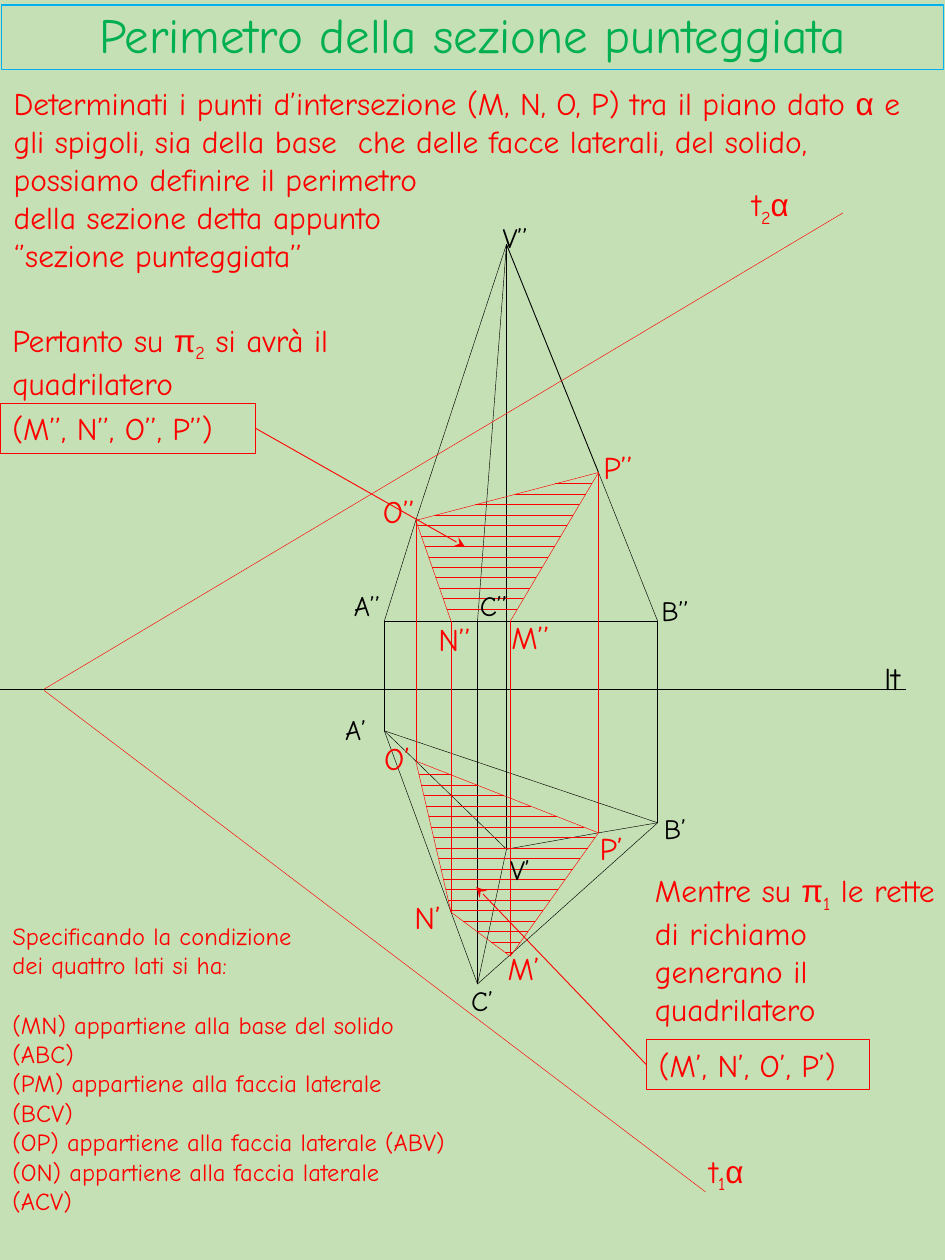
"""Build the slide on the dotted section of a pyramid in double projection."""
from itertools import groupby

from lxml.etree import SubElement
from pptx import Presentation
from pptx.dml.color import RGBColor
from pptx.enum.shapes import MSO_CONNECTOR as Link, MSO_SHAPE as Preset
from pptx.enum.text import MSO_ANCHOR as Anchor, MSO_AUTO_SIZE as Fit, PP_ALIGN as Align
from pptx.oxml.ns import qn
from pptx.util import Inches, Pt

BLACK, RED, GREEN, CYAN, PALE = "000000", "FF0000", "00B050", "00B0F0", "C5E0B4"
TITLE = "Perimetro della sezione punteggiata"
POINTS = {
    "A1": (3.05, 5.8), "B1": (5.22, 6.53), "C1": (3.79, 7.81), "V1": (4.02, 6.74),
    "A2": (3.05, 4.93), "B2": (5.22, 4.93), "C2": (3.79, 4.93), "V2": (4.02, 1.94),
    "M1": (4.05, 7.59), "N1": (3.58, 7.24), "O1": (3.3, 6.04), "P1": (4.75, 6.61),
    "M2": (4.05, 4.93), "N2": (3.58, 4.93), "O2": (3.3, 4.13), "P2": (4.75, 3.75),
}
SOLID_EDGES = ("A1B1 A1C1 C1B1 A1O1 B1P1 B2B1 A2A1 B2A2 A2O2 B2P2 "
               "V2V1 C2V2 V2O2 V1C1 O1V1 C2C1 P1V1").split()
SECTION_EDGES = "N1O1 O1P1 P1M1 M1N1 O2O1 N2N1 P2P1 M2M1 N2O2 O2P2 P2M2".split()
TRACES = [
    ((0.35, 5.47), (6.69, 1.69), RED),
    ((0.35, 5.48), (5.6, 9.46), RED),
    ((7.19, 5.47), (-1.21, 5.47), BLACK),
]
HATCHES = [("1", 6.15, 18), ("2", 3.84, 13)]
HATCH_STEP = 0.083
SOLID_LABELS = [
    ("A’", 2.64, 5.61), ("C’", 3.64, 7.76), ("B’", 5.17, 6.39), ("A’’", 2.71, 4.62),
    ("C’’", 3.71, 4.62), ("B’’", 5.15, 4.66), ("V’", 3.95, 6.72), ("V’’", 3.89, 1.7),
]
SECTION_LABELS = [
    ("M’", 3.93, 7.48), ("N’", 3.19, 7.08), ("P’", 4.66, 6.53), ("P’’", 4.69, 3.51),
    ("O’", 2.95, 5.82), ("O’’", 2.94, 3.86), ("M’’", 3.96, 4.86), ("N’’", 3.38, 4.87),
]
TRACE_LABELS = [("t2α", 5.87, 1.42, RED), ("t1α", 5.53, 9.09, RED), ("lt", 6.92, 5.18, BLACK)]
NOTES = [
    ((0.01, 0.62, 7.48, 1.62), 18, Anchor.TOP, [
        "Determinati i punti d’intersezione (M, N, O, P) tra il piano dato α e gli spigoli, "
        "sia della base  che delle facce laterali, del solido, possiamo definire il perimetro",
        "della sezione detta appunto",
        "‘’sezione punteggiata’’"]),
    ((5.1, 6.88, 2.43, 1.31), 18, Anchor.MIDDLE,
     ["Mentre su π1 le rette di richiamo generano il quadrilatero"]),
    ((0, 2.51, 3.39, 0.71), 18, Anchor.MIDDLE, ["Pertanto su π2 si avrà il quadrilatero"]),
    ((0, 7.26, 3.66, 0.6), 14, Anchor.TOP, [
        "Specificando la condizione",
        "dei quattro lati si ha:",
        "(MN) appartiene alla base del solido (ABC)",
        "(PM) appartiene alla faccia laterale (BCV)",
        "(OP) appartiene alla faccia laterale (ABV)",
        "(ON) appartiene alla faccia laterale",
        "(ACV)"]),
]
CALLOUTS = [
    ("(M’’, N’’, O’’, P’’)", (0, 3.2, 2.03, 0.4), 3, (3.69, 4.34)),
    ("(M’, N’, O’, P’)", (5.13, 8.25, 1.77, 0.4), 1, (3.78, 7.04)),
]


def colour(code):
    return RGBColor.from_string(code)


def inches(values):
    return [Inches(value) for value in values]


def kind_of(char):
    return "greek" if char in "απ" else "index" if char.isdigit() else "plain"


def write(box, lines, size, code, anchor=Anchor.TOP, **para_format):
    """Fill a shape, with Greek letters in Arial and digits as subscripts."""
    frame = box.text_frame
    settings = {"word_wrap": True, "auto_size": Fit.NONE, "vertical_anchor": anchor}
    for name, value in settings.items():
        setattr(frame, name, value)
    for index, line in enumerate(lines):
        para = frame.add_paragraph() if index else frame.paragraphs[0]
        for name, value in ({"alignment": Align.LEFT} | para_format).items():
            setattr(para, name, value)
        for kind, chars in groupby(line, kind_of):
            span = para.add_run()
            span.text = "".join(chars)
            span.font.name = "Arial" if kind == "greek" else "Comic Neue"
            span.font.size = Pt(size)
            span.font.color.rgb = colour(code)
            if kind == "index":
                span.font._element.set("baseline", "-25000")


def add_text(page, place, lines, size, code, anchor=Anchor.TOP):
    box = page.shapes.add_textbox(*inches(place))
    write(box, lines, size, code, anchor)
    return box


def add_line(page, start, end, code, width=0.25):
    line = page.shapes.add_connector(Link.STRAIGHT, *inches((*start, *end)))
    line.line.color.rgb = colour(code)
    line.line.width = Pt(width)
    SubElement(line._element.spPr, qn("a:effectLst"))
    return line


def add_edge(page, edge, code, width=0.25):
    add_line(page, POINTS[edge[:2]], POINTS[edge[2:]], code, width)


def crossings(corners, y):
    """Return the sorted x positions where a level line meets a polygon."""
    sides = zip(corners, corners[1:] + corners[:1])
    return sorted(x1 + (y - y1) * (x2 - x1) / (y2 - y1)
                  for (x1, y1), (x2, y2) in sides if min(y1, y2) <= y < max(y1, y2))


def add_hatch(page, view, top, count):
    corners = [POINTS[name + view] for name in "MNOP"]
    for row in range(count):
        y = top + row * HATCH_STEP
        left, right = crossings(corners, y)
        add_line(page, (left, y), (right, y), RED, 0.5)


def add_callout(page, text, place, side, target):
    box = page.shapes.add_shape(Preset.RECTANGLE, *inches(place))
    box.shadow.inherit = False
    box.fill.background()
    box.line.color.rgb = colour(RED)
    box.line.width = Pt(0.75)
    write(box, [text], 18, RED, Anchor.MIDDLE)
    arrow = add_line(page, place[:2], target, RED, 0.5)
    arrow.begin_connect(box, side)
    SubElement(arrow.line._get_or_add_ln(), qn("a:tailEnd"), type="stealth")


def add_title(page):
    title = page.shapes.title
    title.left, title.top, title.width, title.height = inches((0.01, 0.04, 7.48, 0.51))
    title.line.color.rgb = colour(CYAN)
    title.line.width = Pt(0.75)
    write(title, [TITLE], 28, GREEN, Anchor.MIDDLE, alignment=Align.CENTER, line_spacing=0.9)


def main():
    deck = Presentation()
    deck.slide_width, deck.slide_height = inches((7.5, 10))
    page = deck.slides.add_slide(deck.slide_layouts[5])
    page.background.fill.solid()
    page.background.fill.fore_color.rgb = colour(PALE)
    add_title(page)
    for edge in SOLID_EDGES:
        add_edge(page, edge, BLACK)
    add_edge(page, "P2V2", BLACK, 0.5)
    for start, end, code in TRACES:
        add_line(page, start, end, code)
    for edge in SECTION_EDGES:
        add_edge(page, edge, RED)
    for hatch in HATCHES:
        add_hatch(page, *hatch)
    for text, left, top in SOLID_LABELS:
        add_text(page, (left, top, 0.47, 0.64), [text], 16, BLACK)
    for text, left, top in SECTION_LABELS:
        add_text(page, (left, top, 0.51, 0.4), [text], 18, RED)
    for text, left, top, code in TRACE_LABELS:
        add_text(page, (left, top, 0.62, 0.4), [text], 18, code)
    for place, size, anchor, lines in NOTES:
        box = add_text(page, place, lines, size, RED, anchor)
    box.height = Inches(2.69)
    box.text_frame.paragraphs[2].space_before = Pt(17)
    for callout in CALLOUTS:
        add_callout(page, *callout)
    deck.save("out.pptx")


if __name__ == "__main__":
    main()
